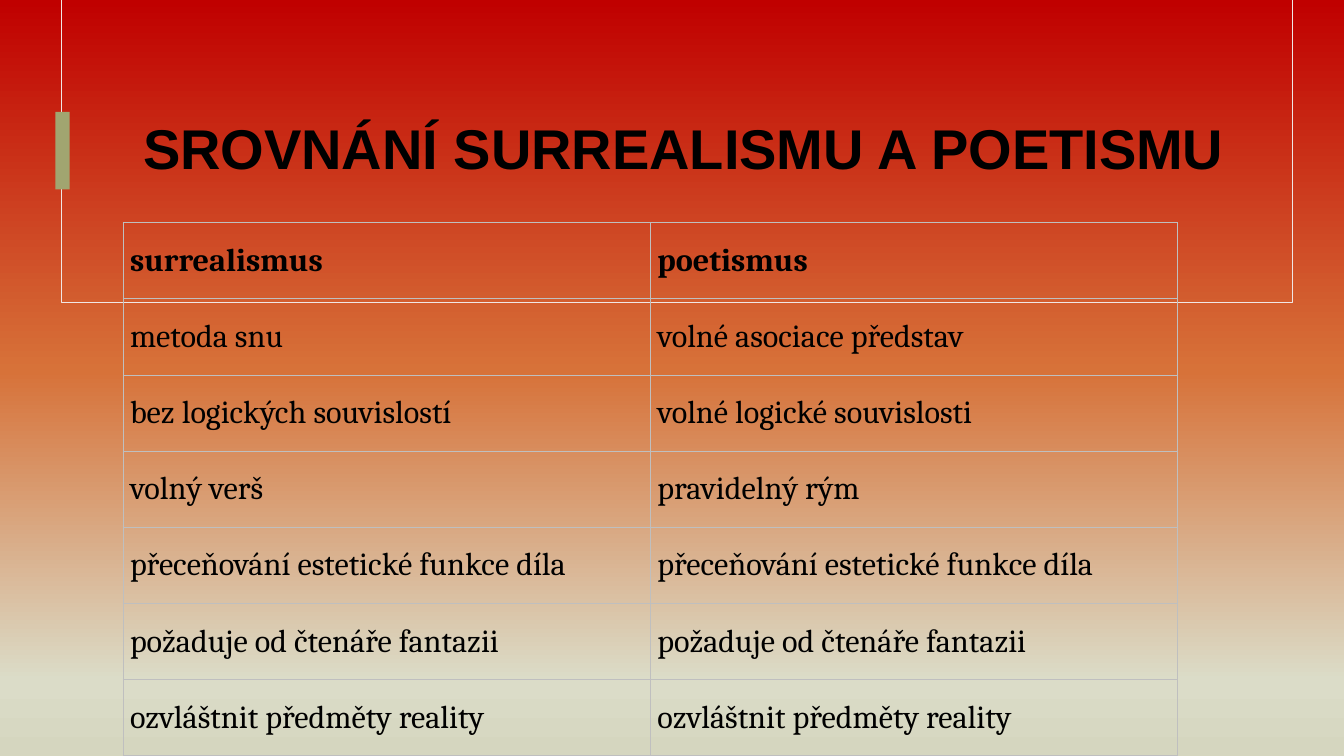
import dataclasses

import lxml.etree
import pptx
import pptx.dml.color
import pptx.enum.shapes
import pptx.enum.text
import pptx.oxml.ns
import pptx.util


@dataclasses.dataclass(frozen=True)
class Theme:
    """Colours, fonts and sizes of the slide."""
    gradient: tuple = ((0, "C00000"), (49, "D77239"), (90, "DBDCC8"), (100, "D5D6BF"))
    ink: str = "000000"
    accent: str = "A1A570"
    frame: str = "F0E7E5"
    grid: str = "BFBFBF"
    rule: float = 0.75
    title_font: str = "Arial"
    title_size: int = 40
    body_font: str = "Cambria"
    body_size: int = 23


def rgb(value):
    """Return a colour object for a hex value."""
    return pptx.dml.color.RGBColor.from_string(value)


def sub(parent, tag, **attrs):
    """Append a DrawingML element and return it."""
    return lxml.etree.SubElement(parent, pptx.oxml.ns.qn(tag), attrs)


class SlideBuilder:
    """Draw styled elements placed by percent shares of the slide."""

    def __init__(self, prs, theme):
        """Add a title-only slide."""
        self.prs, self.theme = prs, theme
        self.slide = prs.slides.add_slide(prs.slide_layouts[5])

    def box(self, x, y, w, h):
        """Turn percent shares into lengths."""
        width, height = self.prs.slide_width, self.prs.slide_height
        return [pptx.util.Emu(round(share * size / 100))
                for share, size in ((x, width), (y, height), (w, width), (h, height))]

    def style(self, p, font, size, bold):
        """Format every run of a paragraph."""
        for r in p.runs:
            r.font.name = font
            r.font.size = pptx.util.Pt(size)
            r.font.bold = bold
            r.font.color.rgb = rgb(self.theme.ink)

    def background(self):
        """Fill the background with the vertical gradient."""
        fill = self.slide.background.fill
        fill.gradient()
        fill.gradient_angle = 270
        stops = self.slide.element.xpath(".//p:bg//a:gsLst")[0]
        for stop in list(stops):
            stops.remove(stop)
        for position, color in self.theme.gradient:
            stop = sub(stops, "a:gs", pos=str(position * 1000))
            sub(stop, "a:srgbClr", val=color)

    def rect(self, place, fill=None, line=None):
        """Add a rectangle with an optional fill and outline."""
        sp = self.slide.shapes.add_shape(
            pptx.enum.shapes.MSO_SHAPE.RECTANGLE, *self.box(*place))
        sp.shadow.inherit = False
        if fill:
            sp.fill.solid()
            sp.fill.fore_color.rgb = rgb(fill)
        else:
            sp.fill.background()
        if line:
            sp.line.color.rgb = rgb(line)
            sp.line.width = pptx.util.Pt(self.theme.rule)
        else:
            sp.line.fill.background()

    def title(self, text, place):
        """Place and format the title."""
        sp = self.slide.shapes.title
        sp.left, sp.top, sp.width, sp.height = self.box(*place)
        tf = sp.text_frame
        tf.text = text
        tf.word_wrap = True
        tf.auto_size = pptx.enum.text.MSO_AUTO_SIZE.NONE
        tf.vertical_anchor = pptx.enum.text.MSO_ANCHOR.MIDDLE
        p = tf.paragraphs[0]
        p.alignment = pptx.enum.text.PP_ALIGN.CENTER
        p.line_spacing = 0.9
        self.style(p, self.theme.title_font, self.theme.title_size, True)

    def borders(self, cell):
        """Rule all four sides of a cell."""
        props = cell._tc.get_or_add_tcPr()
        width = str(pptx.util.Pt(self.theme.rule))
        for index, side in enumerate(("a:lnL", "a:lnR", "a:lnT", "a:lnB")):
            line = sub(props, side, w=width)
            sub(sub(line, "a:solidFill"), "a:srgbClr", val=self.theme.grid)
            props.insert(index, line)

    def table(self, rows, place):
        """Add an unfilled ruled table with a bold first row."""
        table = self.slide.shapes.add_table(
            len(rows), len(rows[0]), *self.box(*place)).table
        table.first_row = table.horz_banding = False
        for i, row in enumerate(rows):
            for j, text in enumerate(row):
                cell = table.cell(i, j)
                cell.fill.background()
                self.borders(cell)
                cell.margin_left = cell.margin_right = pptx.util.Inches(0.07)
                cell.margin_top = cell.margin_bottom = 0
                cell.vertical_anchor = pptx.enum.text.MSO_ANCHOR.MIDDLE
                p = cell.text_frame.paragraphs[0]
                p.text = text
                self.style(p, self.theme.body_font, self.theme.body_size, i == 0)


def main():
    """Build and save the comparison slide."""
    prs = pptx.Presentation()
    prs.slide_width = pptx.util.Inches(13.33)
    prs.slide_height = pptx.util.Inches(7.5)
    theme = Theme()
    page = SlideBuilder(prs, theme)
    page.background()
    page.rect((4.58, 0, 91.6, 40), line=theme.frame)
    page.title("SROVNÁNÍ SURREALISMU A POETISMU", (9.15, 5.07, 83.42, 29.87))
    page.rect((4.13, 14.8, 1.05, 10.27), fill=theme.accent)
    page.table([
        ("surrealismus", "poetismus"),
        ("metoda snu", "volné asociace představ"),
        ("bez logických souvislostí", "volné logické souvislosti"),
        ("volný verš", "pravidelný rým"),
        ("přeceňování estetické funkce díla",) * 2,
        ("požaduje od čtenáře fantazii",) * 2,
        ("ozvláštnit předměty reality",) * 2,
    ], (9.15, 29.47, 78.47, 70.53))
    prs.save("out.pptx")


if __name__ == "__main__":
    main()
